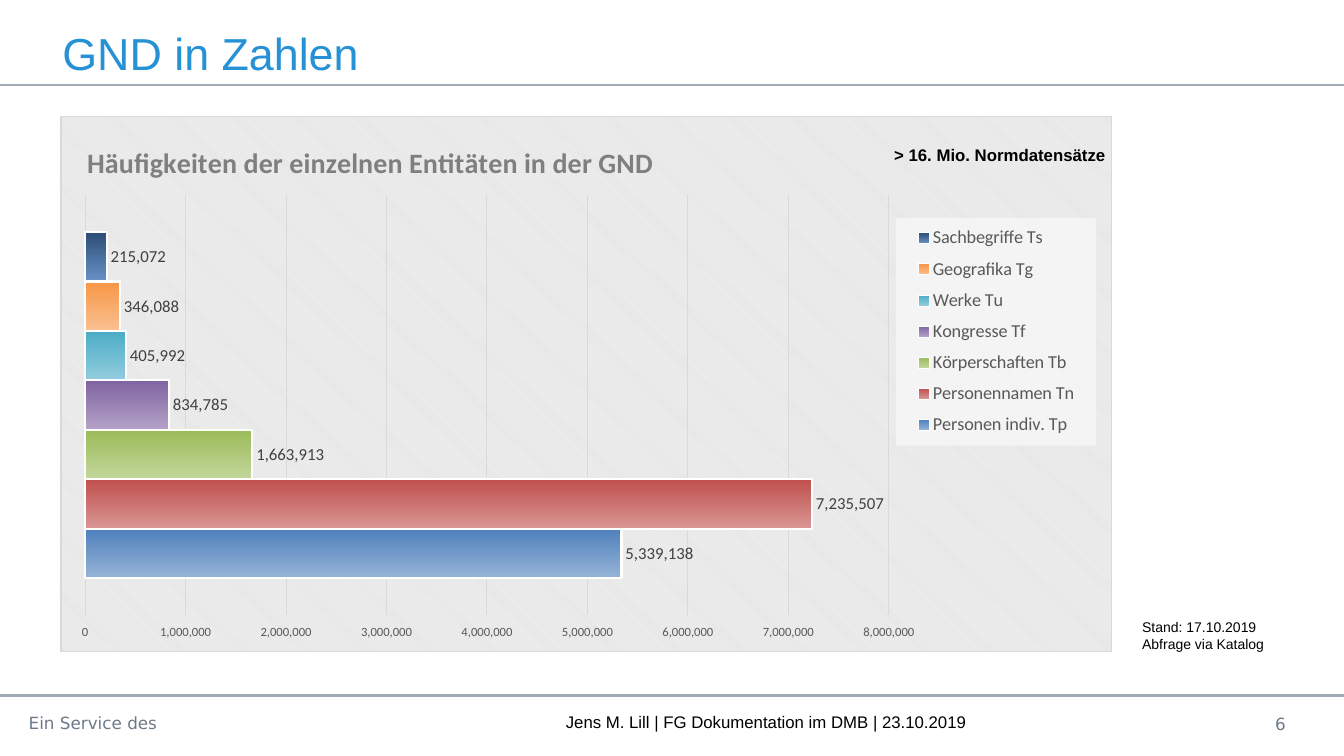
from dataclasses import dataclass

from lxml import etree
from pptx import Presentation
from pptx.chart.chart import Chart
from pptx.chart.data import CategoryChartData
from pptx.dml.color import RGBColor
from pptx.enum.chart import XL_CHART_TYPE as ChartType
from pptx.enum.chart import XL_LABEL_POSITION as LabelPosition
from pptx.enum.chart import XL_LEGEND_POSITION as LegendPosition
from pptx.enum.chart import XL_TICK_LABEL_POSITION as TickLabelPosition
from pptx.enum.chart import XL_TICK_MARK as TickMark
from pptx.enum.shapes import MSO_CONNECTOR as ConnectorType
from pptx.enum.text import MSO_ANCHOR as Anchor
from pptx.enum.text import PP_ALIGN as Align
from pptx.oxml import parse_xml
from pptx.oxml.ns import nsdecls, qn
from pptx.slide import Slide
from pptx.text.text import Font
from pptx.util import Inches, Pt

NUMBER_FORMAT = "#,##0"


@dataclass(frozen=True)
class Label:
    lines: tuple[str, ...]
    left: float
    top: float
    width: float
    height: float
    size: float
    color: str = "000000"
    face: str = "Arial"
    bold: bool = False
    align: Align = Align.LEFT
    anchor: Anchor = Anchor.TOP


@dataclass(frozen=True)
class Entity:
    name: str
    count: int
    start_color: str
    end_color: str


LABELS = (
    Label(("GND in Zahlen",), 0.52, 0.21, 5.2, 0.63, 32, "2791D6", anchor=Anchor.MIDDLE),
    Label(("Ein Service des ",), 0.14, 7.02, 1.57, 0.34, 12, "6D7A89", "DejaVu Sans",
          align=Align.RIGHT),
    Label(("Jens M. Lill | FG Dokumentation im DMB | 23.10.2019",), 3.29, 7.01, 8.62, 0.4, 12,
          align=Align.CENTER),
    Label(("6",), 11.92, 7, 0.93, 0.36, 12, "6D7A89", "DejaVu Sans",
          align=Align.RIGHT, anchor=Anchor.MIDDLE),
    Label(("Stand: 17.10.2019", "Abfrage via Katalog"), 11.23, 6.09, 1.89, 0.44, 10),
    Label(("> 16. Mio. Normdatensätze",), 8.77, 1.39, 2.36, 0.3, 12, bold=True),
)

ENTITIES = (
    Entity("Personen indiv. Tp", 5339138, "4F81BD", "95B3D7"),
    Entity("Personennamen Tn", 7235507, "C0504D", "D99694"),
    Entity("Körperschaften Tb", 1663913, "9BBB59", "C3D69B"),
    Entity("Kongresse Tf", 834785, "8064A2", "B3A2C7"),
    Entity("Werke Tu", 405992, "4BACC6", "93CDDD"),
    Entity("Geografika Tg", 346088, "F79646", "FAC090"),
    Entity("Sachbegriffe Ts", 215072, "2C4D75", "6792C6"),
)


def rgb(color: str) -> RGBColor:
    return RGBColor.from_string(color)


def style_font(font: Font, face: str, size: float, color: str, bold: bool = False) -> None:
    font.name = face
    font.size = Pt(size)
    font.bold = bold
    font.color.rgb = rgb(color)


def add_rule(slide: Slide, top: float) -> None:
    rule = slide.shapes.add_connector(
        ConnectorType.STRAIGHT, 0, Inches(top), Inches(13.33), Inches(top))
    rule.line.color.rgb = rgb("A1AAB5")
    rule.line.width = Pt(1.5)
    etree.SubElement(rule._element.spPr, qn("a:effectLst"))


def add_label(slide: Slide, label: Label) -> None:
    shape = slide.shapes.add_textbox(
        Inches(label.left), Inches(label.top), Inches(label.width), Inches(label.height))
    frame = shape.text_frame
    frame.word_wrap = True
    frame.vertical_anchor = label.anchor
    for index, line in enumerate(label.lines):
        paragraph = frame.add_paragraph() if index else frame.paragraphs[0]
        paragraph.alignment = label.align
        run = paragraph.add_run()
        run.text = line
        style_font(run.font, label.face, label.size, label.color, label.bold)


def manual_layout(left: float, top: float, width: float = 0, height: float = 0,
                  inner: bool = False) -> etree._Element:
    target = '<c:layoutTarget val="inner"/>' if inner else ""
    extent = f'<c:w val="{width}"/><c:h val="{height}"/>' if width else ""
    return parse_xml(
        f'<c:layout {nsdecls("c")}><c:manualLayout>{target}'
        f'<c:xMode val="edge"/><c:yMode val="edge"/>'
        f'<c:x val="{left}"/><c:y val="{top}"/>{extent}</c:manualLayout></c:layout>')


def replace_layout(parent: etree._Element, layout: etree._Element, after: str = "") -> None:
    for existing in parent.findall(qn("c:layout")):
        parent.remove(existing)
    if after:
        parent.find(qn(after)).addnext(layout)
    else:
        parent.insert(0, layout)


def style_title(chart: Chart) -> None:
    chart.has_title = True
    run = chart.chart_title.text_frame.paragraphs[0].add_run()
    run.text = "Häufigkeiten der einzelnen Entitäten in der GND"
    style_font(run.font, "Calibri", 20, "7F7F7F", True)
    replace_layout(chart.chart_title._element, manual_layout(0.02, 0.04), "c:tx")


def style_axes(chart: Chart) -> None:
    chart.category_axis.visible = False
    axis = chart.value_axis
    axis.minimum_scale, axis.maximum_scale, axis.major_unit = 0, 8_000_000, 1_000_000
    axis.major_tick_mark = TickMark.OUTSIDE
    axis.tick_label_position = TickLabelPosition.NEXT_TO_AXIS
    axis.format.line.fill.background()
    axis.major_gridlines.format.line.color.rgb = rgb("D9D9D9")
    axis.major_gridlines.format.line.width = Pt(0.75)
    axis.tick_labels.number_format = NUMBER_FORMAT
    axis.tick_labels.number_format_is_linked = False
    style_font(axis.tick_labels.font, "Calibri", 9, "595959")


def style_legend(chart: Chart) -> None:
    chart.has_legend = True
    legend = chart.legend
    legend.position = LegendPosition.RIGHT
    legend.include_in_layout = False
    style_font(legend.font, "Calibri", 13, "595959")
    replace_layout(legend._element, manual_layout(0.795, 0.19, 0.19, 0.425), "c:legendPos")
    legend._element.find(qn("c:txPr")).addprevious(parse_xml(
        f'<c:spPr {nsdecls("c", "a")}><a:solidFill><a:srgbClr val="FFFFFF">'
        '<a:alpha val="50000"/></a:srgbClr></a:solidFill></c:spPr>'))


def style_series(chart: Chart) -> None:
    plot = chart.plots[0]
    plot.gap_width = 150
    plot.vary_by_categories = False
    for series, entity in zip(plot.series, ENTITIES):
        fill = series.format.fill
        fill.gradient()
        fill.gradient_angle = 270
        for stop, color in zip(fill.gradient_stops, (entity.start_color, entity.end_color)):
            stop.color.rgb = rgb(color)
        series.format.line.color.rgb = rgb("FFFFFF")
        series.format.line.width = Pt(1.5)
        labels = series.data_labels
        labels.show_value = True
        labels.position = LabelPosition.OUTSIDE_END
        labels.number_format = NUMBER_FORMAT
        labels.number_format_is_linked = False
        style_font(labels.font, "Calibri", 12, "404040")


def add_entity_chart(slide: Slide) -> None:
    data = CategoryChartData(number_format=NUMBER_FORMAT)
    data.categories = ["1"]
    for entity in ENTITIES:
        data.add_series(entity.name, [entity.count])
    chart = slide.shapes.add_chart(
        ChartType.BAR_CLUSTERED, Inches(0.6), Inches(1.15), Inches(10.43), Inches(5.32),
        data).chart
    style_font(chart.font, "Calibri", 10, "000000")
    style_title(chart)
    style_axes(chart)
    style_legend(chart)
    style_series(chart)
    chart_element = chart._chartSpace.find(qn("c:chart"))
    replace_layout(chart_element.find(qn("c:plotArea")),
                   manual_layout(0.023, 0.147, 0.765, 0.785, inner=True))
    chart_element.addnext(parse_xml(
        f'<c:spPr {nsdecls("c", "a")}><a:pattFill prst="dkDnDiag">'
        '<a:fgClr><a:srgbClr val="FFFFFF"/></a:fgClr><a:bgClr><a:srgbClr val="E6E6E6"/></a:bgClr>'
        '</a:pattFill><a:ln w="9525"><a:solidFill><a:srgbClr val="D9D9D9"/></a:solidFill></a:ln>'
        '</c:spPr>'))


def main() -> None:
    presentation = Presentation()
    presentation.slide_width = Inches(13.33)
    presentation.slide_height = Inches(7.5)
    slide = presentation.slides.add_slide(presentation.slide_layouts[6])
    for top in (0.84, 6.9):
        add_rule(slide, top)
    add_entity_chart(slide)
    for label in LABELS:
        add_label(slide, label)
    presentation.save("out.pptx")


if __name__ == "__main__":
    main()
